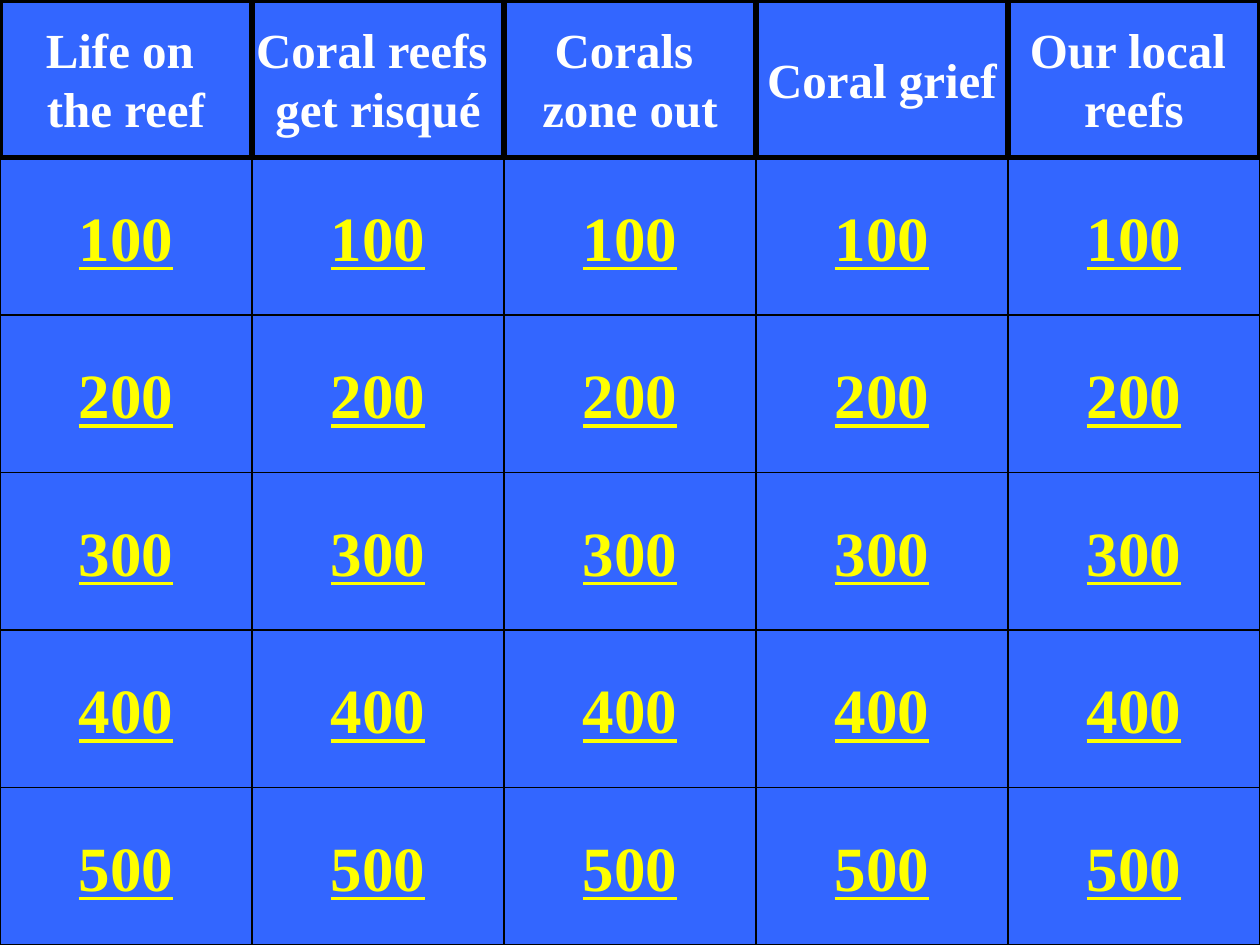
from dataclasses import dataclass

from pptx import Presentation
from pptx.dml.color import RGBColor
from pptx.enum.shapes import MSO_SHAPE
from pptx.enum.text import MSO_ANCHOR, PP_ALIGN
from pptx.util import Pt

BUTTON = MSO_SHAPE.ACTION_BUTTON_CUSTOM
RECTANGLE = MSO_SHAPE.RECTANGLE
MIDDLE = MSO_ANCHOR.MIDDLE
CENTER = PP_ALIGN.CENTER

EMU_PER_PX = 9525
SLIDE_W, SLIDE_H = 960, 720

CATEGORIES = [
    "Life on \nthe reef",
    "Coral reefs \nget risqué",
    "Corals \nzone out",
    "Coral grief",
    "Our local \nreefs",
]
POINTS = [100, 200, 300, 400, 500]


@dataclass(frozen=True)
class Theme:
    font: str = "Times New Roman"
    board: RGBColor = RGBColor(0x33, 0x66, 0xFF)
    border: RGBColor = RGBColor(0, 0, 0)
    category: RGBColor = RGBColor(0xFF, 0xFF, 0xFF)
    points: RGBColor = RGBColor(0xFF, 0xFF, 0)
    category_size: int = 28
    points_size: int = 36
    category_border: float = 3
    points_border: float = 0.75


THEME = Theme()


def px(length):
    return length * EMU_PER_PX


def add_tile(slide, box, preset, text, size, color, border, underline=None):
    tile = slide.shapes.add_shape(preset, *map(px, box))
    tile.shadow.inherit = False
    tile.fill.solid()
    tile.fill.fore_color.rgb = THEME.board
    tile.line.color.rgb = THEME.border
    tile.line.width = Pt(border)

    frame = tile.text_frame
    frame.word_wrap = False
    frame.vertical_anchor = MIDDLE
    frame.text = text
    for paragraph in frame.paragraphs:
        paragraph.alignment = CENTER
        font = paragraph.font
        font.name = THEME.font
        font.size = Pt(size)
        font.bold = True
        font.underline = underline
        font.color.rgb = color


def add_category_row(slide, left, top, width, height):
    column_w = width // len(CATEGORIES)
    for column, category in enumerate(CATEGORIES):
        box = (left + column * column_w, top, column_w, height)
        add_tile(slide, box, RECTANGLE, category, THEME.category_size,
                 THEME.category, THEME.category_border)


def add_points_grid(slide, left, top, width, height):
    column_w = width // len(CATEGORIES)
    row_h = height // len(POINTS)
    for column in range(len(CATEGORIES)):
        for row, points in enumerate(POINTS):
            box = (left + column * column_w, top + row * row_h, column_w, row_h)
            add_tile(slide, box, BUTTON, str(points), THEME.points_size,
                     THEME.points, THEME.points_border, underline=True)


def add_game_board(slide, left, top, width, height):
    """Place the points first, so the heavier category borders lie on top."""
    header_h = height // (len(POINTS) + 1)
    add_points_grid(slide, left, top + header_h, width, height - header_h)
    add_category_row(slide, left, top, width, header_h)


def main():
    presentation = Presentation()
    presentation.slide_width = px(SLIDE_W)
    presentation.slide_height = px(SLIDE_H)
    slide = presentation.slides.add_slide(presentation.slide_layouts[6])
    slide.background.fill.solid()
    slide.background.fill.fore_color.rgb = THEME.board
    add_game_board(slide, 0, 0, SLIDE_W, SLIDE_H)
    presentation.save("out.pptx")


if __name__ == "__main__":
    main()
